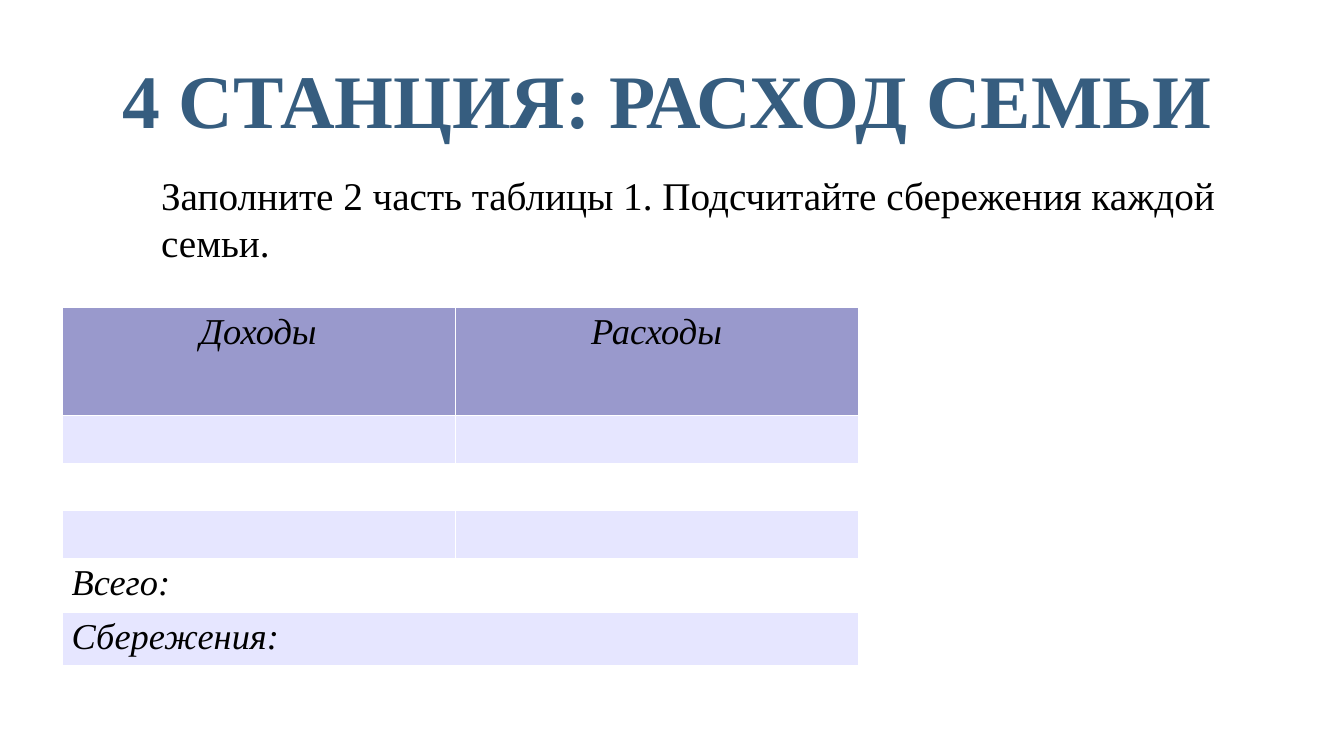
from pptx import Presentation
from pptx.dml.color import RGBColor
from pptx.enum.text import MSO_ANCHOR, PP_ALIGN
from pptx.oxml import parse_xml
from pptx.oxml.ns import nsdecls
from pptx.util import Pt

TITLE = "4 СТАНЦИЯ: РАСХОД СЕМЬИ"
TASK = "Заполните 2 часть таблицы 1. Подсчитайте сбережения каждой семьи."
ROWS = [
    ("Доходы", "Расходы"),
    ("", ""),
    ("", ""),
    ("", ""),
    ("Всего:", ""),
    ("Сбережения:", ""),
]
COLORS = {"title": "365D7F", "text": "000000", "head": "9999CC",
          "band": "E6E6FF", "plain": "FFFFFF", "border": "FFFFFF"}
FONT = "Times New Roman"
WIDTHS = (281, 288)
HEAD, ROW = 77, 34
BORDER = 0.06


def color(name):
    return RGBColor.from_string(COLORS[name])


def write(frame, text, size, tint="text", align=PP_ALIGN.LEFT,
          bold=False, italic=False):
    frame.word_wrap = True
    para = frame.paragraphs[0]
    para.alignment = align
    run = para.add_run()
    run.text = text
    font = run.font
    font.name, font.size = FONT, Pt(size)
    font.bold, font.italic = bold, italic
    font.color.rgb = color(tint)


def add_box(slide, left, top, width, height):
    box = slide.shapes.add_textbox(Pt(left), Pt(top), Pt(width), Pt(height))
    return box.text_frame


def add_border(cell):
    """Draw thin lines on all four sides; they must precede the fill."""
    props = cell._tc.get_or_add_tcPr()
    for index, side in enumerate("LRTB"):
        props.insert(index, parse_xml(
            f'<a:ln{side} {nsdecls("a")} w="{Pt(BORDER)}"><a:solidFill>'
            f'<a:srgbClr val="{COLORS["border"]}"/></a:solidFill></a:ln{side}>'))


def add_budget(slide, left, top):
    height = HEAD + ROW * (len(ROWS) - 1)
    table = slide.shapes.add_table(
        len(ROWS), len(WIDTHS), Pt(left), Pt(top),
        Pt(sum(WIDTHS)), Pt(height)).table
    for column, width in zip(table.columns, WIDTHS):
        column.width = Pt(width)
    for r, texts in enumerate(ROWS):
        table.rows[r].height = Pt(ROW if r else HEAD)
        fill = "head" if r == 0 else "band" if r % 2 else "plain"
        align = PP_ALIGN.JUSTIFY if r else PP_ALIGN.CENTER
        for c, text in enumerate(texts):
            cell = table.cell(r, c)
            cell.fill.solid()
            cell.fill.fore_color.rgb = color(fill)
            add_border(cell)
            if text:
                write(cell.text_frame, text, 26, align=align, italic=True)
    last = len(ROWS) - 1
    table.cell(last, 0).merge(table.cell(last, 1))


def main():
    deck = Presentation()
    deck.slide_width, deck.slide_height = Pt(960), Pt(540)
    slide = deck.slides.add_slide(deck.slide_layouts[6])
    title = add_box(slide, 68.4, 39, 816, 62.6)
    title.vertical_anchor = MSO_ANCHOR.MIDDLE
    write(title, TITLE, 54, tint="title", align=PP_ALIGN.CENTER, bold=True)
    write(add_box(slide, 108, 119, 827, 85), TASK, 28)
    add_budget(slide, 44, 219.6)
    deck.save("out.pptx")


if __name__ == "__main__":
    main()
